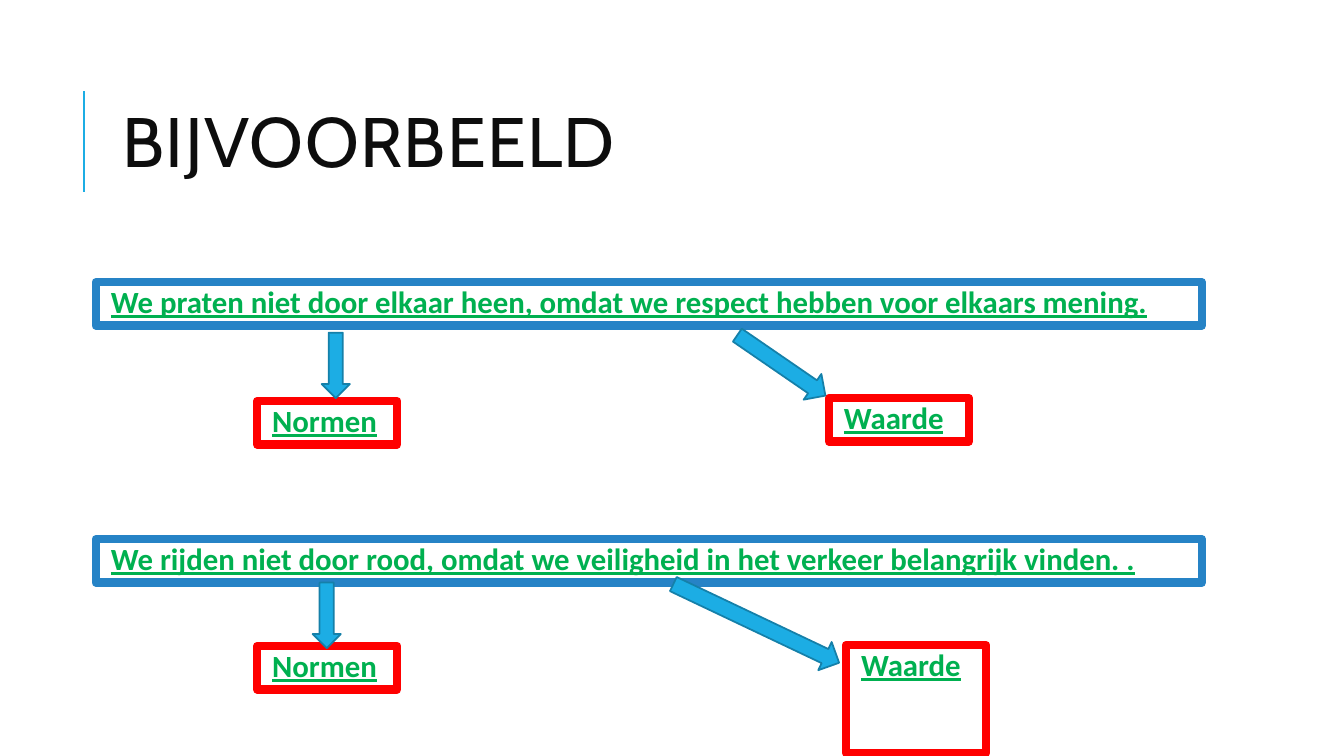
from pptx import Presentation, util as u
from pptx.dml.color import RGBColor
from pptx.enum import shapes, text
from pptx.oxml.xmlchemy import OxmlElement

INK = RGBColor(0x0D, 0x0D, 0x0D)
GREEN = RGBColor(0x00, 0xB0, 0x50)
RED = RGBColor(0xFF, 0x00, 0x00)
BLUE = RGBColor(0x26, 0x83, 0xC6)
CYAN = RGBColor(0x1C, 0xAD, 0xE4)
TEAL = RGBColor(0x15, 0x80, 0xA9)

TITLE = "BIJVOORBEELD"
BOX_HEIGHT, LABEL_WIDTH = 0.43, 1.39
SENTENCE_LEFT, SENTENCE_WIDTH, NORM_LEFT = 0.95, 10.97, 2.55
EXAMPLES = [
    {"sentence": "We praten niet door elkaar heen, omdat we respect hebben voor elkaars mening.",
     "top": 2.8, "norm_top": 3.98, "value": (8.22, 3.95, LABEL_WIDTH, BOX_HEIGHT),
     "down": (3.19, 3.3, 0.28, 0.65), "slanted": (7.22, 3.47, 1.06, 0.31), "angle": 34.5},
    {"sentence": "We rijden niet door rood, omdat we veiligheid in het verkeer belangrijk vinden. .",
     "top": 5.35, "norm_top": 6.41, "value": (8.39, 6.4, LABEL_WIDTH, 1.07),
     "down": (3.1, 5.78, 0.28, 0.65), "slanted": (6.59, 6.03, 1.82, 0.31), "angle": 25.4},
]


def write(box, words, *, size, font, color, spacing, bold=False, underline=False,
          tracking=0, insets=(0.1, 0.05), anchor=text.MSO_ANCHOR.TOP):
    frame = box.text_frame
    frame.word_wrap = True
    frame.vertical_anchor = anchor
    frame.margin_left, frame.margin_right = u.Inches(insets[0]), u.Inches(insets[1])
    frame.margin_top = frame.margin_bottom = u.Inches(0.05)
    para = frame.paragraphs[0]
    para.alignment = text.PP_ALIGN.LEFT
    para.line_spacing = spacing
    span = para.add_run()
    span.text = words
    span.font.size, span.font.name = u.Pt(size), font
    span.font.bold, span.font.underline = bold, underline
    span.font.color.rgb = color
    if tracking:
        span.font._element.set("spc", str(tracking * 100))


def add_shape(page, kind, place, line, width, fill=None):
    shape = page.shapes.add_shape(kind, *map(u.Inches, place))
    shape.shadow.inherit = False
    if fill is None:
        shape.fill.background()
    else:
        shape.fill.solid()
        shape.fill.fore_color.rgb = fill
    shape.line.color.rgb = line
    shape.line.width = u.Pt(width)
    return shape


def add_box(page, words, place, line):
    box = add_shape(page, shapes.MSO_SHAPE.RECTANGLE, place, line, 6)
    write(box, words, size=22, font="Calibri", color=GREEN, spacing=0.9,
          bold=True, underline=True, insets=(0.15, 0.05))


def add_arrow(page, kind, place, angle=0):
    arrow = add_shape(page, kind, place, TEAL, 1.25, CYAN)
    arrow.rotation = angle


def add_heading(page):
    rule = page.shapes.add_connector(
        shapes.MSO_CONNECTOR.STRAIGHT, *map(u.Inches, (0.83, 1.9, 0.83, 0.9)))
    rule.line.color.rgb = CYAN
    rule.line.width = u.Pt(1.5)
    rule._element.spPr.append(OxmlElement("a:effectLst"))
    title = page.shapes.add_textbox(*map(u.Inches, (1.12, 0.64, 10.63, 1.64)))
    write(title, TITLE, size=50, font="Cabin", color=INK, spacing=0.8, tracking=1,
          insets=(0.1, 0.1), anchor=text.MSO_ANCHOR.MIDDLE)


def main():
    deck = Presentation()
    deck.slide_width, deck.slide_height = u.Inches(13.33), u.Inches(7.5)
    page = deck.slides.add_slide(deck.slide_layouts[6])
    add_heading(page)
    for example in EXAMPLES:
        add_box(page, example["sentence"],
                (SENTENCE_LEFT, example["top"], SENTENCE_WIDTH, BOX_HEIGHT), BLUE)
        add_box(page, "Normen",
                (NORM_LEFT, example["norm_top"], LABEL_WIDTH, BOX_HEIGHT), RED)
        add_box(page, "Waarde", example["value"], RED)
        add_arrow(page, shapes.MSO_SHAPE.DOWN_ARROW, example["down"])
        add_arrow(page, shapes.MSO_SHAPE.RIGHT_ARROW, example["slanted"], example["angle"])
    deck.save("out.pptx")


if __name__ == "__main__":
    main()
